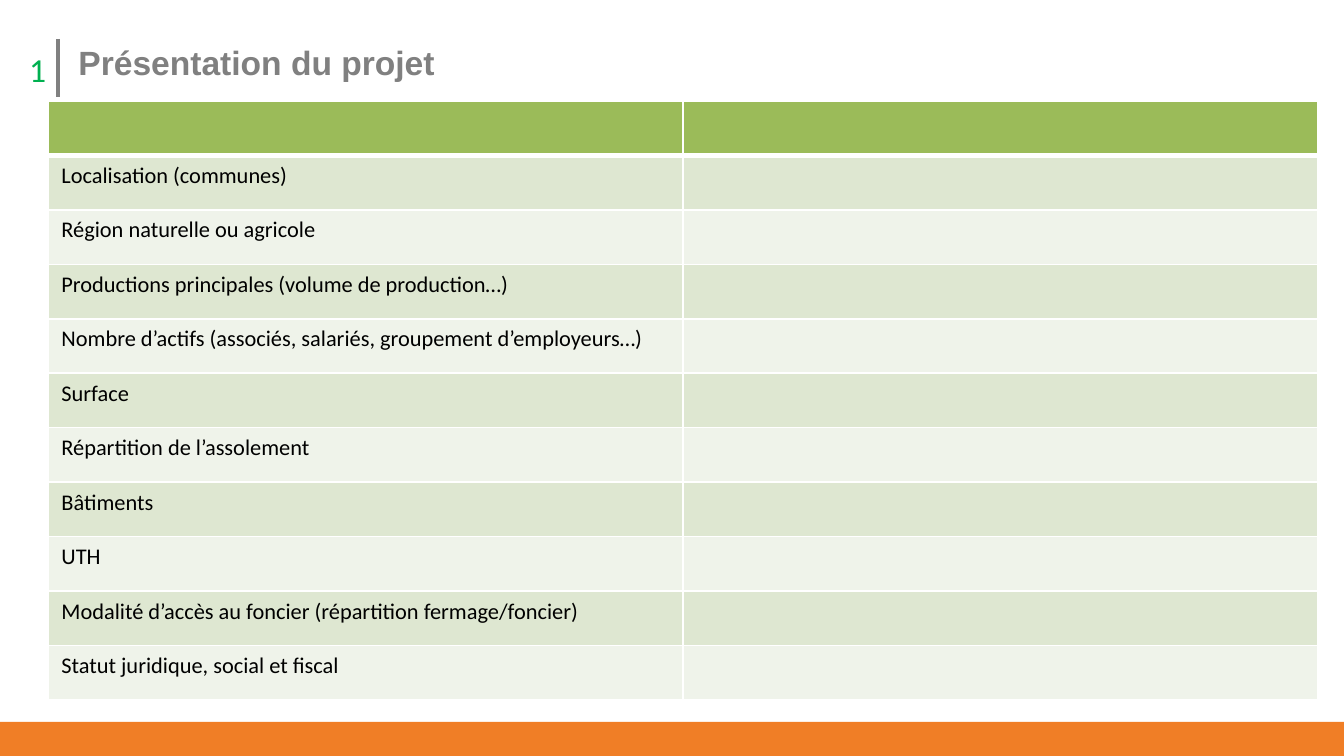
from dataclasses import dataclass

from lxml import etree
from pptx import Presentation
from pptx.dml.color import RGBColor as RGB
from pptx.enum.shapes import MSO_CONNECTOR as LINK, MSO_SHAPE as SHAPE
from pptx.enum.text import MSO_ANCHOR as ANCHOR, MSO_AUTO_SIZE as FIT, PP_ALIGN as ALIGN
from pptx.oxml.ns import qn
from pptx.util import Pt

SCALE = 914400 / 134.4  # EMU per px


@dataclass(frozen=True)
class Theme:
    grey: str = "808080"
    green: str = "00B050"
    orange: str = "F07E26"
    head: str = "9BBB59"
    bands: tuple = ("DEE7D1", "EFF3EA")
    black: str = "000000"
    white: str = "FFFFFF"
    large: int = 18
    small: int = 12
    thin: int = 1
    thick: int = 3


T = Theme()

ROWS = [
    "",
    "Localisation (communes)",
    "Région naturelle ou agricole",
    "Productions principales (volume de production…)",
    "Nombre d’actifs (associés, salariés, groupement d’employeurs…)",
    "Surface",
    "Répartition de l’assolement",
    "Bâtiments",
    "UTH",
    "Modalité d’accès au foncier (répartition fermage/foncier)",
    "Statut juridique, social et fiscal",
]


def px(n):
    return round(n * SCALE)


def paint(fill, color):
    fill.solid()
    fill.fore_color.rgb = RGB.from_string(color)


def write(frame, text, face, size, color, bold=False):
    frame.text = text
    par = frame.paragraphs[0]
    par.alignment = ALIGN.LEFT
    font = par.font
    font.name, font.size, font.bold = face, Pt(size), bold
    font.color.rgb = RGB.from_string(color)


def label(box, text, face, color, bold=False):
    frame = box.text_frame
    frame.word_wrap = True
    frame.auto_size = FIT.SHAPE_TO_FIT_TEXT
    frame.vertical_anchor = ANCHOR.TOP
    write(frame, text, face, T.large, color, bold)


def add_title(slide, text, x, y, w, h):
    box = slide.shapes.title
    box.left, box.top, box.width, box.height = map(px, (x, y, w, h))
    label(box, text, "Arial", T.grey, True)


def add_rule(slide, x, top, end):
    rule = slide.shapes.add_connector(LINK.STRAIGHT, px(x), px(top), px(x), px(end))
    rule.line.width = Pt(2.25)
    rule.line.color.rgb = RGB.from_string(T.grey)
    etree.SubElement(rule._element.spPr, qn("a:effectLst"))


def add_bar(slide, x, y, w, h):
    bar = slide.shapes.add_shape(SHAPE.RECTANGLE, px(x), px(y), px(w), px(h))
    bar.shadow.inherit = False
    paint(bar.fill, T.orange)
    bar.line.fill.background()


def edge(cell, side, width):
    line = etree.SubElement(cell._tc.get_or_add_tcPr(), qn(f"a:ln{side}"), w=str(Pt(width)))
    fill = etree.SubElement(line, qn("a:solidFill"))
    etree.SubElement(fill, qn("a:srgbClr"), val=T.white)


def add_grid(slide, rows, x, y, w, h):
    grid = slide.shapes.add_table(len(rows), 2, px(x), px(y), px(w), px(h)).table
    for r, text in enumerate(rows):
        color = T.bands[(r - 1) % 2] if r else T.head
        # A thick edge parts the header from the body
        top = T.thick if r == 1 else T.thin
        base = T.thin if r else T.thick
        for cell, words in zip(grid.rows[r].cells, (text, "")):
            write(cell.text_frame, words, "Calibri", T.small, T.black)
            for side, width in zip("LRTB", (T.thin, T.thin, top, base)):
                edge(cell, side, width)
            paint(cell.fill, color)


def add_number(slide, text, x, y, w, h):
    box = slide.shapes.add_textbox(px(x), px(y), px(w), px(h))
    label(box, text, "Calibri", T.green)


def main():
    deck = Presentation()
    deck.slide_width, deck.slide_height = px(1344), px(756)
    slide = deck.slides.add_slide(deck.slide_layouts[5])

    # Heading
    add_title(slide, "Présentation du projet", 65, 35, 1085, 54)
    add_rule(slide, 58, 39, 97)

    # Footer band
    add_bar(slide, -5, 722, 1349, 34)

    # Project facts
    add_grid(slide, ROWS, 48, 101, 1270, 599)

    # Page number
    add_number(slide, "1", 16, 42, 32, 54)

    deck.save("out.pptx")


if __name__ == "__main__":
    main()
